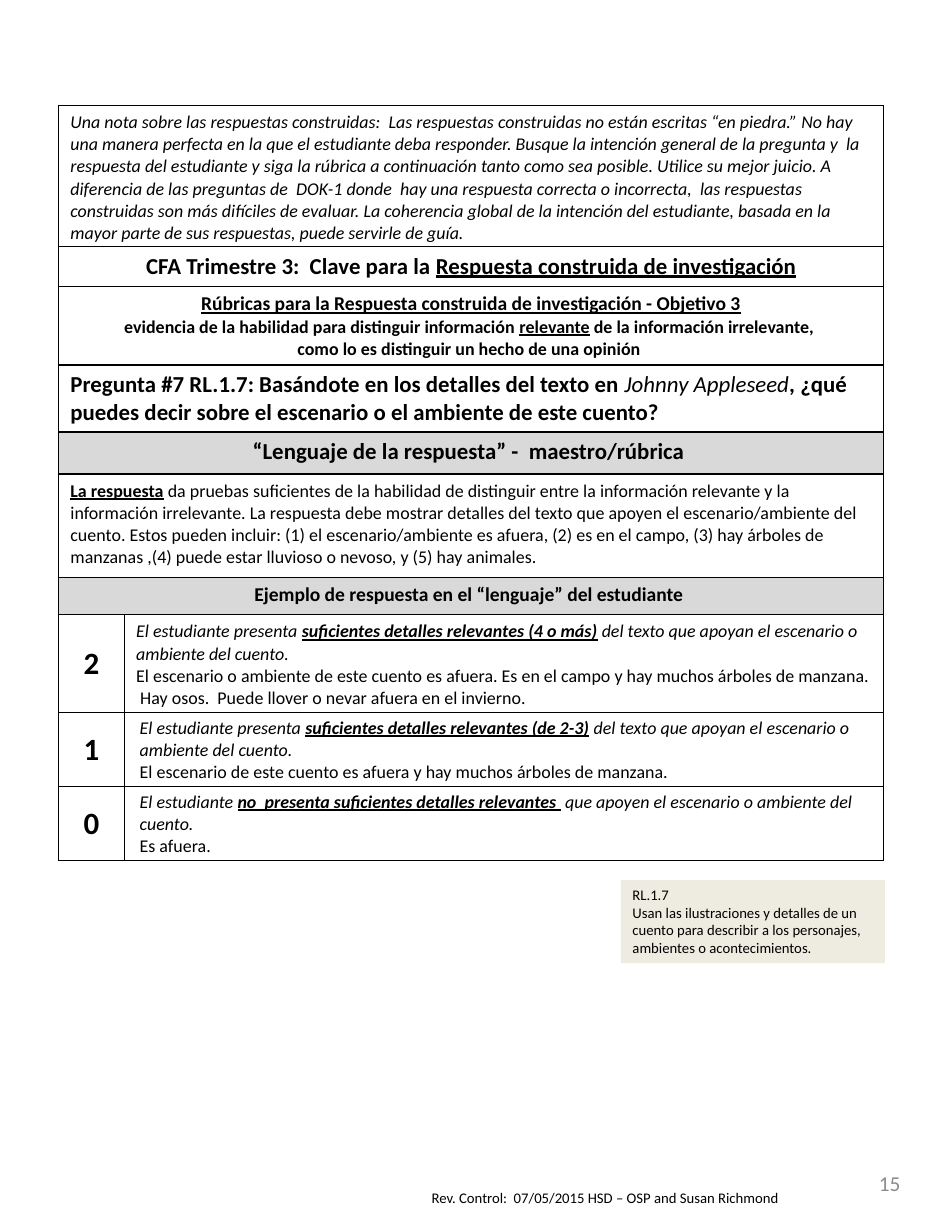
from dataclasses import dataclass
from typing import Optional

from lxml import etree
from pptx import Presentation
from pptx import util as u
from pptx.dml.color import RGBColor
from pptx.enum import shapes, text
from pptx.oxml import ns

COLORS = {"ink": "000000", "band": "D9D9D9", "note": "EEECE1", "number": "8C8C8C"}
FONT = "Calibri"
ALIGN = text.PP_ALIGN
ANCHOR = text.MSO_ANCHOR
NARROW, WIDE = (0.1, 0.05), (0.13, 0.04)  # horizontal and vertical insets


@dataclass
class Run:
    words: str
    bold: bool = False
    italic: bool = False
    underline: bool = False
    size: Optional[float] = None


@dataclass
class Band:
    """Full-width table row."""
    height: float
    paragraphs: list
    size: float
    align: ALIGN = ALIGN.LEFT
    fill: Optional[str] = None


@dataclass
class Score:
    """Table row with a score and its sample answer."""
    height: float
    points: str
    lead: str
    key: Run
    rest: list
    answer: str
    insets: tuple


def write(frame, paragraphs: list, *, size: float, color: str = "ink",
          align: ALIGN = ALIGN.LEFT) -> None:
    """Fill a text frame; each paragraph is a list of runs, "\n" breaks a line."""
    frame.word_wrap = True
    for i, runs in enumerate(paragraphs):
        paragraph = frame.paragraphs[0] if i == 0 else frame.add_paragraph()
        paragraph.alignment = align
        for part in runs:
            for j, words in enumerate(part.words.split("\n")):
                if j:
                    paragraph.add_line_break()
                run = paragraph.add_run()
                run.text = words
                font = run.font
                font.name, font.size = FONT, u.Pt(part.size or size)
                font.bold, font.italic = part.bold, part.italic
                font.underline = part.underline
                font.color.rgb = RGBColor.from_string(COLORS[color])


def set_insets(target, insets: tuple) -> None:
    target.margin_left = target.margin_right = u.Inches(insets[0])
    target.margin_top = target.margin_bottom = u.Inches(insets[1])


def style_cell(cell, fill: Optional[str] = None, insets: tuple = NARROW) -> None:
    set_insets(cell, insets)
    properties = cell._tc.get_or_add_tcPr()
    for side in ("lnL", "lnR", "lnT", "lnB"):
        line = etree.SubElement(properties, ns.qn(f"a:{side}"), w=str(u.Pt(1)))
        solid = etree.SubElement(line, ns.qn("a:solidFill"))
        etree.SubElement(solid, ns.qn("a:srgbClr"), val=COLORS["ink"])
    if fill:
        cell.fill.solid()
        cell.fill.fore_color.rgb = RGBColor.from_string(COLORS[fill])
    else:
        cell.fill.background()


def add_label(slide, box: tuple, words: str, **style):
    label = slide.shapes.add_textbox(*map(u.Inches, box))
    write(label.text_frame, [[Run(words)]], **style)
    return label


BANDS = [
    Band(1.2, [[Run(
        "Una nota sobre las respuestas construidas:  Las respuestas construidas no están "
        "escritas “en piedra.” No hay una manera perfecta en la que el estudiante deba "
        "responder. Busque la intención general de la pregunta y  la respuesta del "
        "estudiante y siga la rúbrica a continuación tanto como sea posible. Utilice su "
        "mejor juicio. A diferencia de las preguntas de  DOK-1 donde  hay una respuesta "
        "correcta o incorrecta,  las respuestas construidas son más difíciles de evaluar. "
        "La coherencia global de la intención del estudiante, basada en la mayor parte de "
        "sus respuestas, puede servirle de guía.", italic=True)]], 11),
    Band(0.34, [[
        Run("CFA Trimestre 3:  Clave para la ", bold=True),
        Run("Respuesta construida de investigación", bold=True, underline=True)]],
        14, ALIGN.CENTER),
    Band(0.67, [
        [Run("Rúbricas para la Respuesta construida de investigación - Objetivo 3",
             bold=True, underline=True, size=12)],
        [Run("evidencia de la habilidad para distinguir información ", bold=True),
         Run("relevante", bold=True, underline=True),
         Run(" de la información irrelevante, ", bold=True)],
        [Run("como lo es distinguir un hecho de una opinión ", bold=True)]],
        11, ALIGN.CENTER),
    Band(0.57, [[
        Run("Pregunta #7 RL.1.7: Basándote en los detalles del texto en ", bold=True),
        Run("Johnny Appleseed", italic=True),
        Run(", ¿qué puedes decir sobre el escenario o el ambiente de este cuento?",
            bold=True)]], 14),
    Band(0.36, [[Run("“Lenguaje de la respuesta” -  maestro/rúbrica ", bold=True)]],
         14, ALIGN.CENTER, "band"),
    Band(0.88, [[
        Run("La respuesta", bold=True, underline=True),
        Run(" ", bold=True),
        Run("da pruebas suficientes de la habilidad de distinguir entre la información "
            "relevante y la información irrelevante. La respuesta debe mostrar detalles "
            "del texto que apoyen el escenario/ambiente del cuento. Estos pueden incluir: "
            "(1) el escenario/ambiente es afuera, (2) es en el campo, (3) hay árboles de "
            "manzanas ,(4) puede estar lluvioso o nevoso, y (5) hay animales.")]], 11),
    Band(0.32, [[Run("Ejemplo de respuesta en el “lenguaje” del estudiante ", bold=True)]],
         12, ALIGN.CENTER, "band"),
]

SUPPORT = [Run(" ", bold=True, italic=True),
           Run("del texto que apoyan el escenario o ambiente del cuento.", italic=True)]


def key_phrase(words: str) -> Run:
    return Run(words, bold=True, italic=True, underline=True)


SCORES = [
    Score(0.83, "2", "El estudiante presenta ",
          key_phrase("suficientes detalles relevantes (4 o más)"), SUPPORT,
          "El escenario o ambiente de este cuento es afuera. Es en el campo y hay muchos "
          "árboles de manzana.  Hay osos.  Puede llover o nevar afuera en el invierno.",
          NARROW),
    Score(0.62, "1", "El estudiante presenta ",
          key_phrase("suficientes detalles relevantes (de 2-3)"), SUPPORT,
          "El escenario de este cuento es afuera y hay muchos árboles de manzana.", WIDE),
    Score(0.62, "0", "El estudiante ",
          key_phrase("no  presenta suficientes detalles relevantes "),
          [Run(" que apoyen el escenario o ambiente del cuento.", italic=True)],
          "Es afuera.", WIDE),
]


def add_rubric(slide) -> None:
    rows = BANDS + SCORES
    height = sum(row.height for row in rows)
    frame = slide.shapes.add_table(len(rows), 2, u.Inches(0.5), u.Inches(0.9),
                                   u.Inches(7.03), u.Inches(height))
    rubric = frame.table
    rubric.first_row = rubric.horz_banding = False
    for column, width in zip(rubric.columns, (0.56, 6.47)):
        column.width = u.Inches(width)
    for i, row in enumerate(rows):
        rubric.rows[i].height = u.Inches(row.height)
        left, right = rubric.cell(i, 0), rubric.cell(i, 1)
        if isinstance(row, Band):
            left.merge(right)
            style_cell(left, row.fill)
            style_cell(right, row.fill)
            write(left.text_frame, row.paragraphs, size=row.size, align=row.align)
        else:
            style_cell(left)
            left.vertical_anchor = ANCHOR.MIDDLE
            write(left.text_frame, [[Run(row.points, bold=True)]], size=19,
                  align=ALIGN.CENTER)
            style_cell(right, insets=row.insets)
            criterion = [Run(row.lead, italic=True), row.key, *row.rest]
            write(right.text_frame, [criterion, [Run(row.answer)]], size=11)


def add_standard(slide) -> None:
    standard = slide.shapes.add_shape(shapes.MSO_SHAPE.RECTANGLE,
                                      *map(u.Inches, (5.29, 7.5, 2.25, 0.71)))
    standard.shadow.inherit = False
    standard.fill.solid()
    standard.fill.fore_color.rgb = RGBColor.from_string(COLORS["note"])
    standard.line.fill.background()
    standard.text_frame.vertical_anchor = ANCHOR.TOP
    write(standard.text_frame, [[Run(
        "RL.1.7\nUsan las ilustraciones y detalles de un cuento para describir a los "
        "personajes, ambientes o acontecimientos.")]], size=9)


def main() -> None:
    deck = Presentation()
    deck.slide_width, deck.slide_height = u.Inches(8), u.Inches(10.5)
    slide = deck.slides.add_slide(deck.slide_layouts[6])

    # Footer and page number
    add_label(slide, (3.58, 10.08, 4, 0.25),
              "Rev. Control:  07/05/2015 HSD – OSP and Susan Richmond", size=9)
    number = add_label(slide, (6.91, 9.8, 0.87, 0.56), "15", size=13,
                       color="number", align=ALIGN.RIGHT)
    number.text_frame.vertical_anchor = ANCHOR.MIDDLE
    set_insets(number.text_frame, (0.11, 0.05))

    # Scoring rubric and the standard it assesses
    add_rubric(slide)
    add_standard(slide)
    deck.save("out.pptx")


if __name__ == "__main__":
    main()
